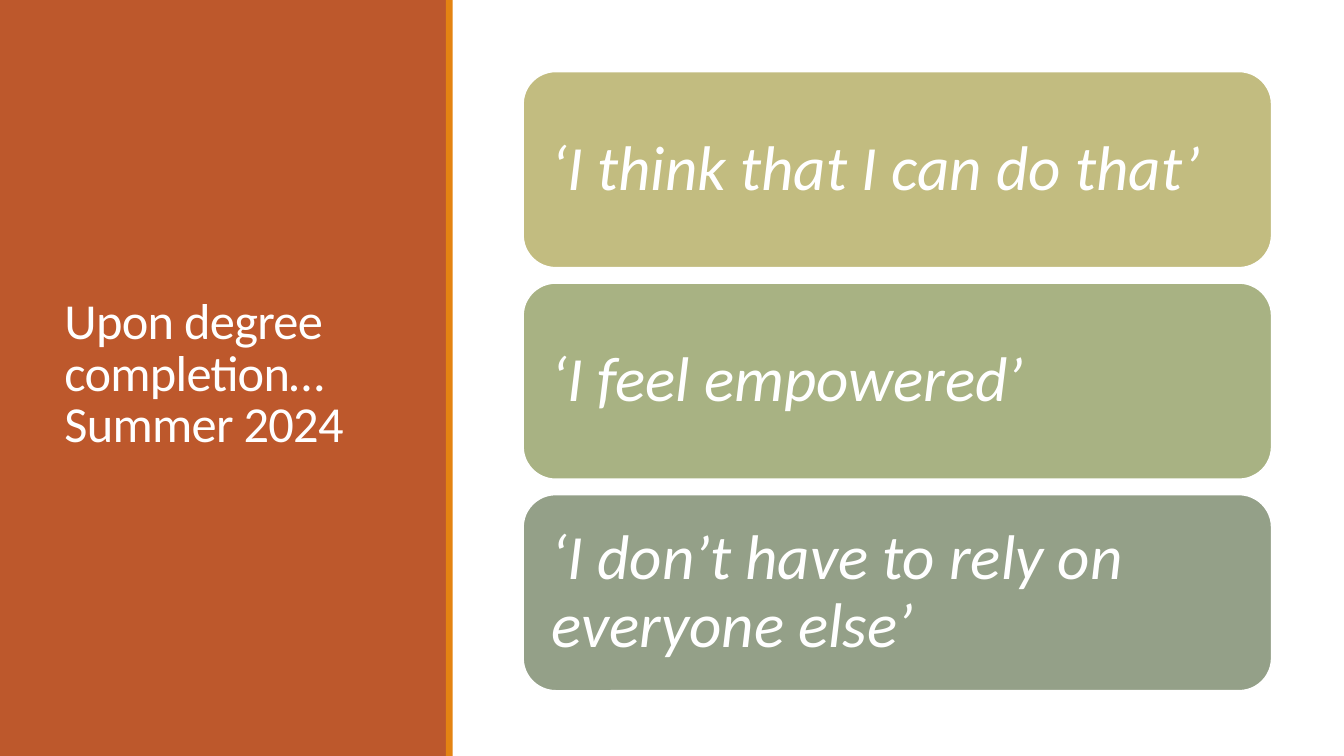
from pptx import Presentation
from pptx.dml.color import RGBColor
from pptx.enum.shapes import MSO_SHAPE
from pptx.enum.text import MSO_ANCHOR, MSO_AUTO_SIZE, PP_ALIGN
from pptx.util import Cm, Pt

RECTANGLE = MSO_SHAPE.RECTANGLE
ROUNDED = MSO_SHAPE.ROUNDED_RECTANGLE
MIDDLE = MSO_ANCHOR.MIDDLE
LEFT = PP_ALIGN.LEFT
NO_AUTOFIT = MSO_AUTO_SIZE.NONE

FONT = "Calibri"
COLOURS = {
    "white": "FFFFFF",
    "rust": "BD582C",
    "orange": "E48312",
    "sand": "C2BC80",
    "olive": "A8B283",
    "sage": "94A088",
}
QUOTES = [
    ("‘I think that I can do that’", "sand"),
    ("‘I feel empowered’", "olive"),
    ("‘I don’t have to rely on everyone else’", "sage"),
]
TITLE_ONLY_LAYOUT = 5
SLIDE_WIDTH, SLIDE_HEIGHT = 33.87, 19.05
PANEL_WIDTH, STRIPE_WIDTH = 11.24, 0.17
CARD_LEFT, CARD_TOP = 13.18, 1.8
CARD_WIDTH, CARD_HEIGHT, CARD_PITCH = 18.87, 4.95, 5.33
CARD_INSET = 0.48


def colour(name):
    return RGBColor.from_string(COLOURS[name])


def add_filled_shape(page, kind, left, top, width, height, fill):
    shape = page.shapes.add_shape(kind, Cm(left), Cm(top), Cm(width), Cm(height))
    shape.shadow.inherit = False
    shape.fill.solid()
    shape.fill.fore_color.rgb = colour(fill)
    shape.line.fill.background()
    return shape


def write_text(box, text, size, line_spacing, italic=False):
    """Set one left-aligned white paragraph, centred vertically in the box."""
    frame = box.text_frame
    frame.word_wrap = True
    frame.auto_size = NO_AUTOFIT
    frame.vertical_anchor = MIDDLE
    frame.text = text
    paragraph = frame.paragraphs[0]
    paragraph.alignment = LEFT
    paragraph.line_spacing = line_spacing
    paragraph.font.name = FONT
    paragraph.font.size = Pt(size)
    paragraph.font.italic = italic
    paragraph.font.color.rgb = colour("white")
    return frame


def place_title(page, text):
    title = page.shapes.title
    title.left, title.top = Cm(1.37), Cm(1.45)
    title.width, title.height = Cm(8.56), Cm(16.03)
    frame = write_text(title, text, 36, 0.85)
    span = frame.paragraphs[0].runs[0]
    span.font._element.set("spc", "-50")
    # Bring the title in front of the side panel
    page.shapes.element.append(title.element)


def add_quote_card(page, position, quote, fill):
    top = CARD_TOP + position * CARD_PITCH
    card = add_filled_shape(
        page, ROUNDED, CARD_LEFT, top, CARD_WIDTH, CARD_HEIGHT, fill
    )
    card.line.color.rgb = colour("white")
    card.line.width = Pt(1.25)
    frame = write_text(card, quote, 45, 0.9, italic=True)
    frame.margin_left = frame.margin_right = Cm(CARD_INSET)
    frame.margin_top = frame.margin_bottom = Cm(CARD_INSET)


def main():
    deck = Presentation()
    deck.slide_width, deck.slide_height = Cm(SLIDE_WIDTH), Cm(SLIDE_HEIGHT)
    page = deck.slides.add_slide(deck.slide_layouts[TITLE_ONLY_LAYOUT])
    add_filled_shape(page, RECTANGLE, 0, 0, PANEL_WIDTH, SLIDE_HEIGHT, "rust")
    add_filled_shape(
        page, RECTANGLE, PANEL_WIDTH, 0, STRIPE_WIDTH, SLIDE_HEIGHT, "orange"
    )
    place_title(page, "Upon degree completion… Summer 2024")
    for position, (quote, fill) in enumerate(QUOTES):
        add_quote_card(page, position, quote, fill)
    deck.save("out.pptx")


if __name__ == "__main__":
    main()
